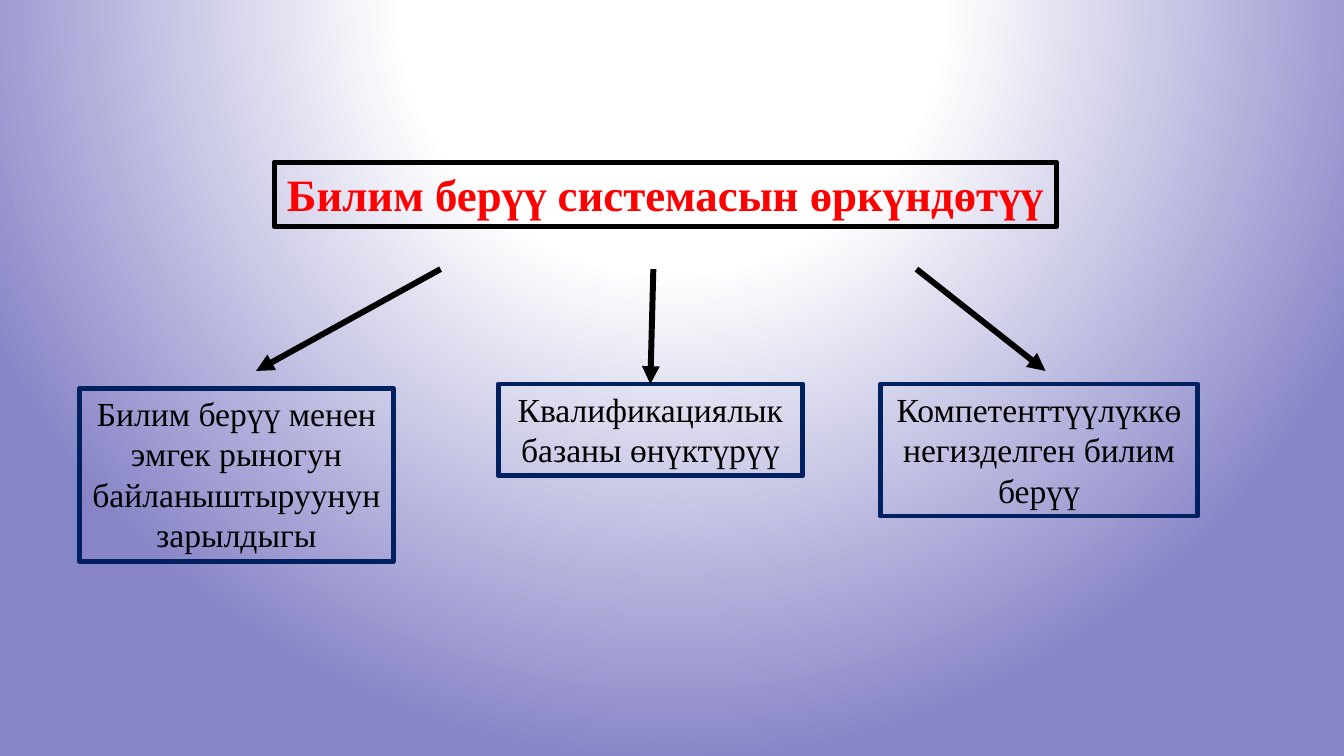
from lxml import etree
from pptx import Presentation
from pptx.dml.color import RGBColor
from pptx.enum.shapes import MSO_CONNECTOR, MSO_SHAPE
from pptx.enum.text import MSO_ANCHOR, MSO_AUTO_SIZE, PP_ALIGN
from pptx.oxml.ns import qn
from pptx.util import Inches, Pt

RECTANGLE = MSO_SHAPE.RECTANGLE
STRAIGHT = MSO_CONNECTOR.STRAIGHT
CENTER = PP_ALIGN.CENTER
TOP = MSO_ANCHOR.TOP
GROW = MSO_AUTO_SIZE.SHAPE_TO_FIT_TEXT

BLACK, RED, NAVY = "000000", "FF0000", "002060"
GLOW_STOPS = [(0, "FFFFFF"), (35, "FFFFFF"), (100, "8784C7")]
GLOW_CENTRE = {"l": 50, "t": -80, "r": 50, "b": 180}

GOAL = "Билим берүү системасын өркүндөтүү"
GOAL_BOX = (2.72, 1.61, 7.76, 0.64)
GOAL_FONT = {"name": "Times New Roman", "size": Pt(32), "bold": True}
DIRECTION_FONT = {"name": "Times New Roman", "size": Pt(24), "bold": False}
ARROW_TOP = 2.67

DIRECTIONS = [
    ("Билим берүү менен эмгек рыногун байланыштыруунун зарылдыгы",
     (0.79, 3.85, 3.11, 1.72), 4.37, (2.54, 3.68)),
    ("Квалификациялык базаны өнүктүрүү",
     (4.94, 3.81, 3.02, 0.91), 6.48, (6.45, 3.81)),
    ("Компетенттүүлүккө негизделген билим берүү",
     (8.73, 3.81, 3.15, 1.31), 9.09, (10.37, 3.68)),
]


def paint(color_format, hex_color):
    color_format.rgb = RGBColor.from_string(hex_color)


def add_glow(slide):
    slide.background.fill.gradient()
    glow = slide.element.find(".//" + qn("a:gradFill"))
    for part in list(glow):
        glow.remove(part)
    stops = etree.SubElement(glow, qn("a:gsLst"))
    for percent, hex_color in GLOW_STOPS:
        stop = etree.SubElement(stops, qn("a:gs"), pos=str(percent * 1000))
        etree.SubElement(stop, qn("a:srgbClr"), val=hex_color)
    circle = etree.SubElement(glow, qn("a:path"), {"path": "circle"})
    centre = {side: str(percent * 1000) for side, percent in GLOW_CENTRE.items()}
    etree.SubElement(circle, qn("a:fillToRect"), centre)


def add_framed_text(slide, box, text, font_format, text_color, frame_color, frame_width):
    frame = slide.shapes.add_shape(RECTANGLE, *map(Inches, box))
    frame.shadow.inherit = False
    frame.fill.background()
    paint(frame.line.color, frame_color)
    frame.line.width = Pt(frame_width)
    content = frame.text_frame
    for key, value in {"word_wrap": True, "auto_size": GROW, "vertical_anchor": TOP}.items():
        setattr(content, key, value)
    paragraph = content.paragraphs[0]
    paragraph.alignment = CENTER
    run = paragraph.add_run()
    run.text = text
    for key, value in font_format.items():
        setattr(run.font, key, value)
    paint(run.font.color, text_color)


def add_arrow(slide, start, end):
    arrow = slide.shapes.add_connector(STRAIGHT, *map(Inches, (*start, *end)))
    paint(arrow.line.color, BLACK)
    arrow.line.width = Pt(4.25)
    properties = arrow.element.spPr
    etree.SubElement(properties.find(qn("a:ln")), qn("a:tailEnd"), type="triangle")
    etree.SubElement(properties, qn("a:effectLst"))


def build_goal_slide(slide):
    add_glow(slide)
    add_framed_text(slide, GOAL_BOX, GOAL, GOAL_FONT, RED, BLACK, 3.75)
    for text, box, arrow_left, arrow_tip in DIRECTIONS:
        add_framed_text(slide, box, text, DIRECTION_FONT, BLACK, NAVY, 3.5)
        add_arrow(slide, (arrow_left, ARROW_TOP), arrow_tip)


def main():
    presentation = Presentation()
    presentation.slide_width = Inches(13.33)
    presentation.slide_height = Inches(7.5)
    build_goal_slide(presentation.slides.add_slide(presentation.slide_layouts[6]))
    presentation.save("out.pptx")


if __name__ == "__main__":
    main()
